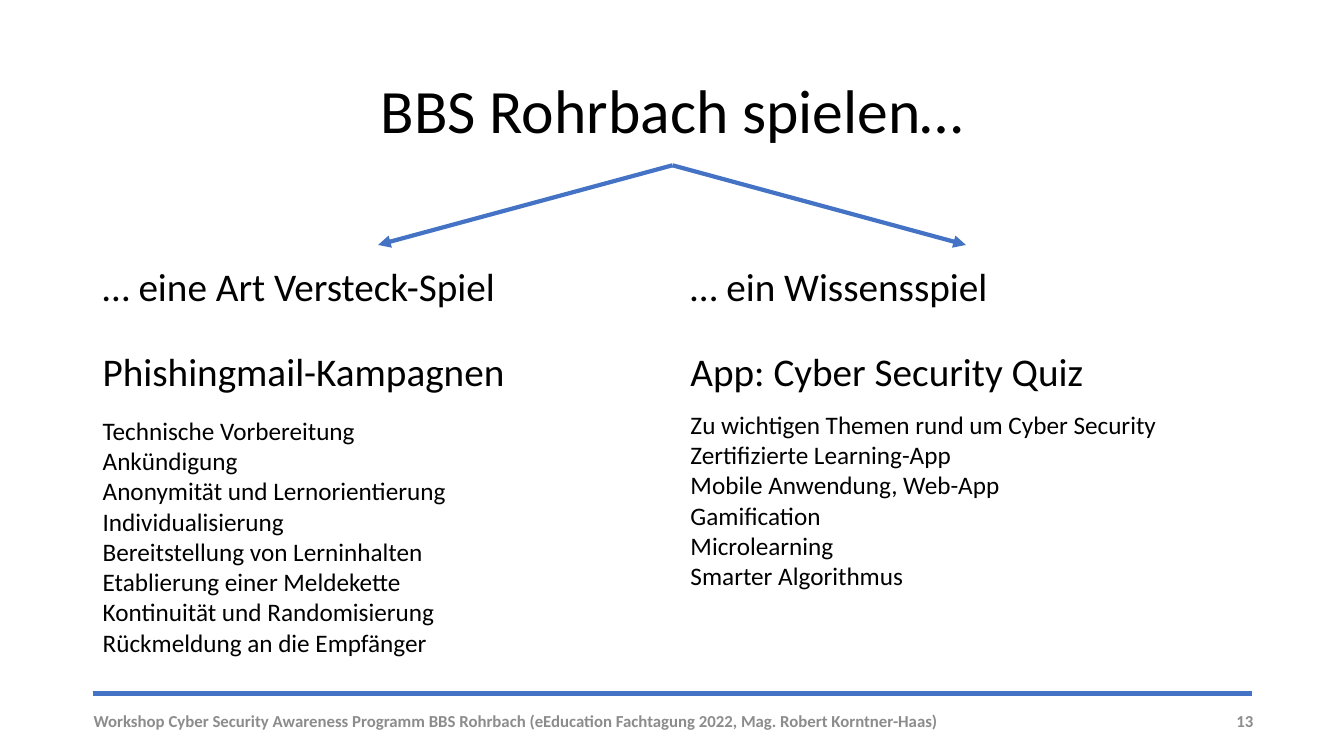
from pptx import Presentation
from pptx.dml.color import RGBColor
from pptx.enum import shapes, text
from pptx.oxml.ns import qn
from pptx.util import Inches, Pt
from lxml import etree

# Content
TITLE = "BBS Rohrbach spielen…"
GAMES = [
    {"kind": "… eine Art Versteck-Spiel",
     "name": "Phishingmail-Kampagnen",
     "top": 4.07, "width": 3.65,
     "points": ["Technische Vorbereitung", "Ankündigung",
                "Anonymität und Lernorientierung", "Individualisierung",
                "Bereitstellung von Lerninhalten",
                "Etablierung einer Meldekette",
                "Kontinuität und Randomisierung",
                "Rückmeldung an die Empfänger"]},
    {"kind": "… ein Wissensspiel",
     "name": "App: Cyber Security Quiz",
     "top": 4.01, "width": 4.88,
     "points": ["Zu wichtigen Themen rund um Cyber Security",
                "Zertifizierte Learning-App", "Mobile Anwendung, Web-App",
                "Gamification", "Microlearning", "Smarter Algorithmus"]},
]
FOOTER = ("Workshop Cyber Security Awareness Programm BBS Rohrbach "
          "(eEducation Fachtagung 2022, Mag. Robert Korntner-Haas)")
NUMBER = "13"

# Colours and measures
BLACK = RGBColor(0x00, 0x00, 0x00)
GREY = RGBColor(0x8C, 0x8C, 0x8C)
BLUE = RGBColor(0x44, 0x72, 0xC4)
LEFT, WIDE = 0.92, 11.5
COL, STEP = 5.67, 5.83
LINE = 0.3
MID, FORK, TIP = 6.67, 1.64, 2.43

deck = Presentation()
deck.slide_width, deck.slide_height = Inches(13.33), Inches(7.5)
slide = deck.slides.add_slide(deck.slide_layouts[6])


def write(lines, x, y, w, h, size=18, color=BLACK, bold=False, wrap=True,
          align=text.PP_ALIGN.LEFT, anchor=text.MSO_ANCHOR.TOP,
          spacing=1.0, before=0):
    box = slide.shapes.add_textbox(Inches(x), Inches(y), Inches(w), Inches(h))
    frame = box.text_frame
    frame.word_wrap = wrap
    frame.vertical_anchor = anchor
    frame.text = "\n".join(lines)
    for para in frame.paragraphs:
        para.alignment = align
        para.line_spacing = spacing
        para.space_before = Pt(before)
        font = para.runs[0].font
        font.name, font.size, font.bold = "Calibri", Pt(size), bold
        font.color.rgb = color


def draw(x1, y1, x2, y2, arrow=False):
    line = slide.shapes.add_connector(
        shapes.MSO_CONNECTOR.STRAIGHT,
        Inches(x1), Inches(y1), Inches(x2), Inches(y2))
    line.line.color.rgb = BLUE
    line.line.width = Pt(3)
    if arrow:
        etree.SubElement(line.line._get_or_add_ln(), qn("a:tailEnd"),
                         type="triangle")
    etree.SubElement(line._element.spPr, qn("a:effectLst"))


# Title
write([TITLE], LEFT, 0.4, WIDE, 1.45, size=44, spacing=0.9,
      align=text.PP_ALIGN.CENTER, anchor=text.MSO_ANCHOR.MIDDLE)

# One column per game, with an arrow to it
for i, game in enumerate(GAMES):
    x = LEFT + i * STEP
    draw(MID, FORK, 3.75 + i * STEP, TIP, arrow=True)
    for head, y in ((game["kind"], 2.64), (game["name"], 3.49)):
        write([head], x, y, COL, 0.52, size=28, spacing=0.8, before=10)
    points = game["points"]
    write(points, x, game["top"], game["width"], 0.1 + LINE * len(points),
          wrap=False)

# Footer
draw(LEFT, 6.88, LEFT + WIDE, 6.88)
for words, x, w, align in ((FOOTER, 0.83, 11.03, text.PP_ALIGN.LEFT),
                           (NUMBER, 12.01, 0.52, text.PP_ALIGN.RIGHT)):
    write([words], x, 6.95, w, 0.4, size=12, color=GREY, bold=True,
          align=align, anchor=text.MSO_ANCHOR.MIDDLE)

deck.save("out.pptx")
